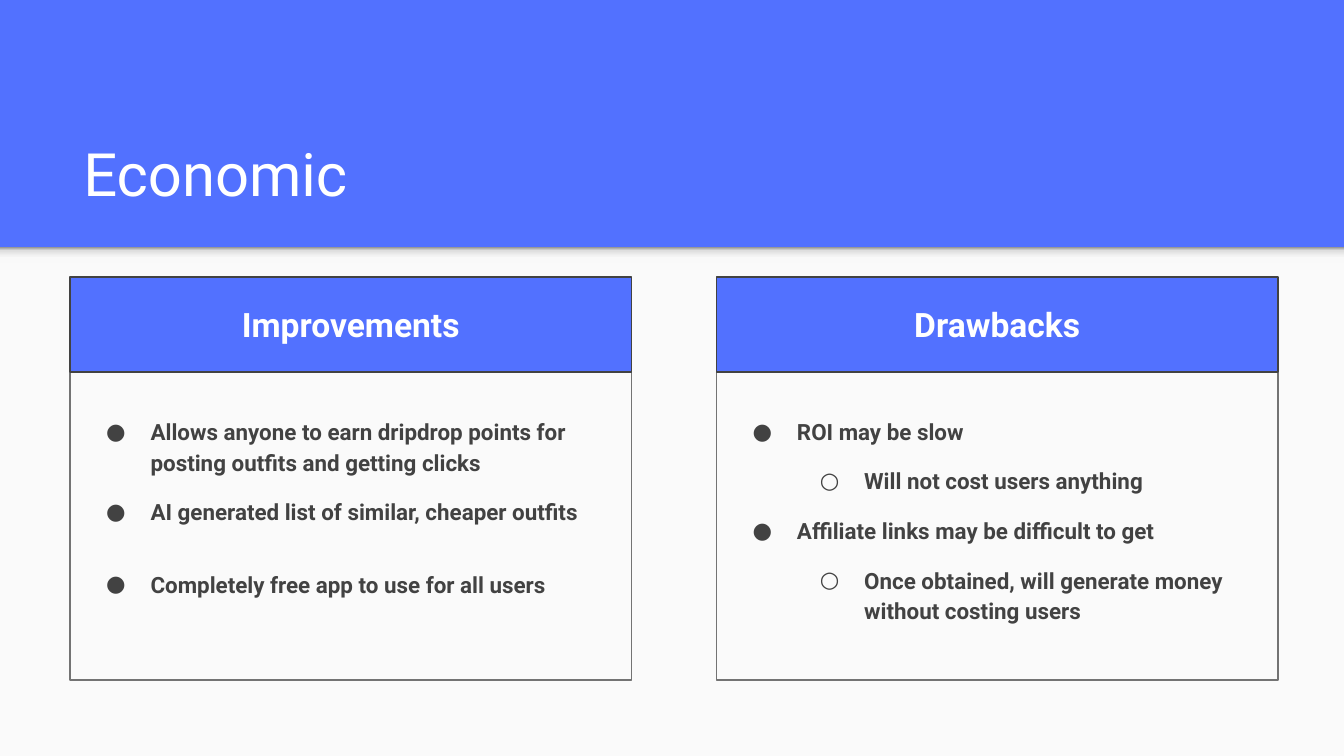
from dataclasses import dataclass

from pptx import Presentation
from pptx.dml.color import RGBColor
from pptx.enum.shapes import MSO_SHAPE
from pptx.enum.text import MSO_ANCHOR, MSO_AUTO_SIZE, PP_ALIGN
from pptx.oxml import parse_xml
from pptx.oxml.ns import nsdecls
from pptx.util import Inches, Pt

RECTANGLE = MSO_SHAPE.RECTANGLE
TOP, MIDDLE, BOTTOM = MSO_ANCHOR.TOP, MSO_ANCHOR.MIDDLE, MSO_ANCHOR.BOTTOM
LEFT, CENTER = PP_ALIGN.LEFT, PP_ALIGN.CENTER
NO_AUTOFIT = MSO_AUTO_SIZE.NONE


@dataclass
class Theme:
    face: str = "Roboto"
    blue: str = "5271FF"
    paper: str = "FAFAFA"
    white: str = "FFFFFF"
    ink: str = "424242"
    border: str = "737373"
    title: int = 32
    heading: int = 18
    body: int = 12


theme = Theme()


def style_font(para, size, color, bold=False):
    para.font.name = theme.face
    para.font.size = Pt(size)
    para.font.bold = bold
    para.font.color.rgb = RGBColor.from_string(color)


def set_frame(box, anchor, top_inset=0.1):
    frame = box.text_frame
    frame.word_wrap = True
    frame.auto_size = NO_AUTOFIT
    frame.vertical_anchor = anchor
    frame.margin_left = frame.margin_right = frame.margin_bottom = Inches(0.1)
    frame.margin_top = Inches(top_inset)
    return frame


deck = Presentation()
deck.slide_width = Inches(10)
deck.slide_height = deck.slide_width * 9 // 16
page = deck.slides.add_slide(deck.slide_layouts[3])
page.background.fill.solid()
page.background.fill.fore_color.rgb = RGBColor.from_string(theme.blue)

left, column_width, column_step = Inches(0.52), Inches(4.18), Inches(4.81)
banner_bottom = Inches(1.84)
heading_top, heading_height = Inches(2.06), Inches(0.71)
body_top, body_height = heading_top + heading_height, Inches(2.29)

panel = page.shapes.add_shape(
    RECTANGLE, 0, banner_bottom, deck.slide_width, deck.slide_height - banner_bottom)
panel.fill.solid()
panel.fill.fore_color.rgb = RGBColor.from_string(theme.paper)

edge = page.shapes.add_shape(RECTANGLE, 0, banner_bottom, deck.slide_width, Inches(0.12))
stops = [(0, "F9F9F9"), (36, "F9F9F9"), (80, "DEDEDE"), (100, "999999")]
stop_xml = "".join(
    f'<a:gs pos="{share * 1000}"><a:srgbClr val="{color}"/></a:gs>' for share, color in stops)
edge._element.spPr.insert(2, parse_xml(
    f'<a:gradFill {nsdecls("a")} rotWithShape="1"><a:gsLst>{stop_xml}</a:gsLst>'
    '<a:lin ang="16200000" scaled="0"/></a:gradFill>'))

for depth, backdrop in enumerate((panel, edge), start=2):
    backdrop.line.fill.background()
    backdrop.shadow.inherit = False
    page.shapes._spTree.insert(depth, backdrop._element)

title = page.shapes.title
title.left, title.top = left, Inches(0.81)
title.width, title.height = column_step + column_width, Inches(0.84)
para = set_frame(title, BOTTOM).paragraphs[0]
para.text = "Economic"
para.alignment = LEFT
style_font(para, theme.title, theme.white)

columns = [
    ("Improvements", [
        (0, 1.15, "Allows anyone to earn dripdrop points for posting outfits and getting clicks"),
        (0, 1.15, "AI generated list of similar, cheaper outfits"),
        (0, 2, "Completely free app to use for all users"),
    ]),
    ("Drawbacks", [
        (0, 1.15, "ROI may be slow"),
        (1, 1.15, "Will not cost users anything"),
        (0, 1.15, "Affiliate links may be difficult to get"),
        (1, 1.15, "Once obtained, will generate money without costing users"),
    ]),
]

for column, (heading_text, items) in enumerate(columns):
    x = left + column * column_step

    body = page.placeholders[column + 1]
    body.left, body.top, body.width, body.height = x, body_top, column_width, body_height
    body.line.color.rgb = RGBColor.from_string(theme.border)
    body.line.width = Pt(0.75)
    frame = set_frame(body, TOP, top_inset=0.31)
    for number, (level, spacing, text) in enumerate(items):
        para = frame.add_paragraph() if number else frame.paragraphs[0]
        para.text = text
        para.level = level
        para.line_spacing = spacing
        para.space_before = Pt(10 if number else 0)
        para.space_after = Pt(0)
        properties = para._p.get_or_add_pPr()
        properties.set("marL", str(Inches(0.5 * (level + 1))))
        properties.set("indent", str(Inches(-0.33)))
        for bullet in (
            f'<a:buClr {nsdecls("a")}><a:srgbClr val="{theme.ink}"/></a:buClr>',
            f'<a:buFont {nsdecls("a")} typeface="{theme.face}"/>',
            f'<a:buChar {nsdecls("a")} char="{"●○"[level]}"/>',
        ):
            properties.append(parse_xml(bullet))
        style_font(para, theme.body, theme.ink, bold=True)

    heading = page.shapes.add_shape(RECTANGLE, x, heading_top, column_width, heading_height)
    heading.shadow.inherit = False
    heading.fill.solid()
    heading.fill.fore_color.rgb = RGBColor.from_string(theme.blue)
    heading.line.color.rgb = RGBColor.from_string(theme.ink)
    heading.line.width = Pt(0.75)
    para = set_frame(heading, MIDDLE).paragraphs[0]
    para.text = heading_text
    para.alignment = CENTER
    style_font(para, theme.heading, theme.white, bold=True)

deck.save("out.pptx")
